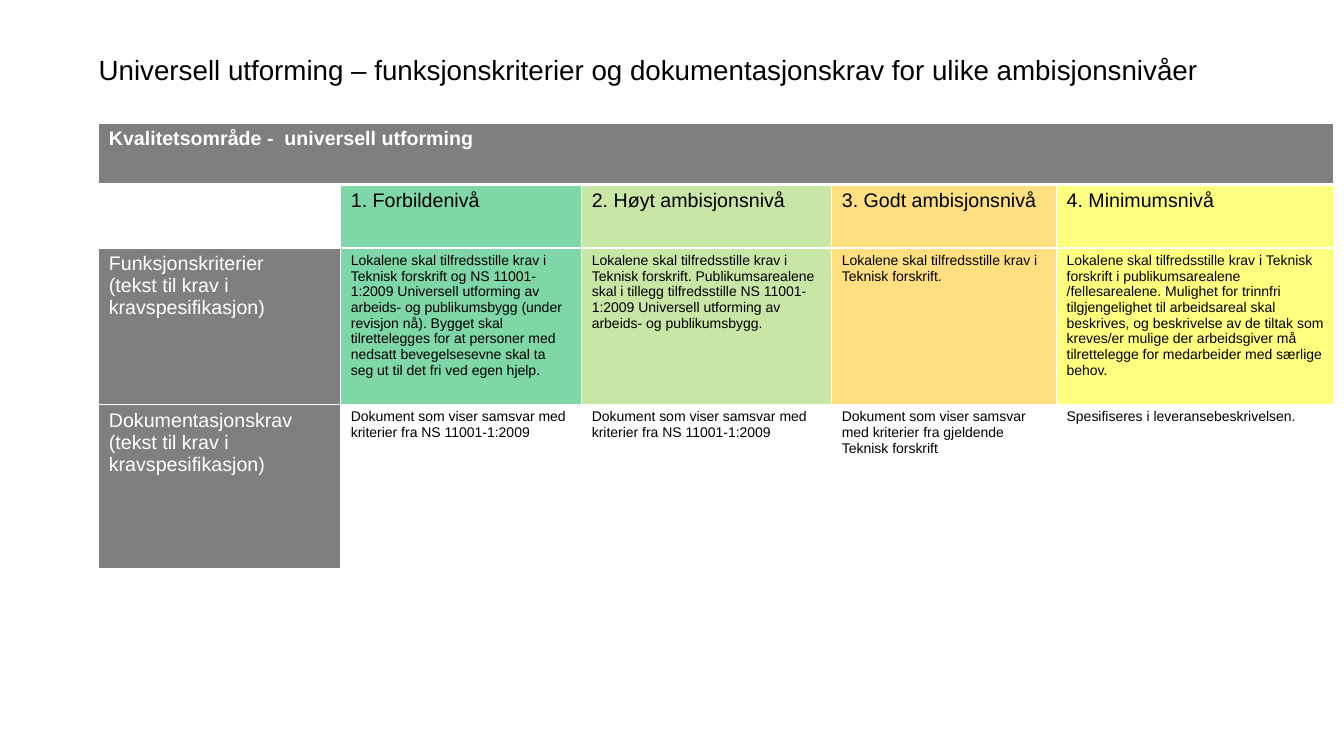
from lxml.etree import SubElement
from pptx import Presentation
from pptx.dml.color import RGBColor
from pptx.enum.text import MSO_ANCHOR
from pptx.oxml.ns import qn
from pptx.util import Inches, Pt

BLACK = RGBColor(0x00, 0x00, 0x00)
WHITE = RGBColor(0xFF, 0xFF, 0xFF)
GREEN = RGBColor(0x00, 0xB0, 0x50)
LIME = RGBColor(0x92, 0xD0, 0x50)
AMBER = RGBColor(0xFF, 0xC0, 0x00)
YELLOW = RGBColor(0xFF, 0xFF, 0x00)

LEVEL_COLORS = [GREEN, LIME, AMBER, YELLOW]
COL_WIDTHS = [2.4, 2.39, 2.48, 2.23, 2.75]
ROW_HEIGHTS = [0.61, 0.63, 1.55, 1.63]

TITLE = "Universell utforming – funksjonskriterier og dokumentasjonskrav for ulike ambisjonsnivåer"
AREA = "Kvalitetsområde -  universell utforming"
LEVELS = ["1. Forbildenivå", "2. Høyt ambisjonsnivå", "3. Godt ambisjonsnivå", "4. Minimumsnivå"]
CRITERIA_HEAD = ["Funksjonskriterier", "(tekst til krav i kravspesifikasjon)"]
CRITERIA = [
    "Lokalene skal tilfredsstille krav i Teknisk forskrift og NS 11001-1:2009 Universell "
    "utforming av arbeids- og publikumsbygg (under revisjon nå). Bygget skal tilrettelegges "
    "for at personer med nedsatt bevegelsesevne skal ta seg ut til det fri ved egen hjelp.",
    "Lokalene skal tilfredsstille krav i Teknisk forskrift. Publikumsarealene skal i tillegg "
    "tilfredsstille NS 11001-1:2009 Universell utforming av arbeids- og publikumsbygg.",
    "Lokalene skal tilfredsstille krav i Teknisk forskrift.",
    "Lokalene skal tilfredsstille krav i Teknisk forskrift i publikumsarealene "
    "/fellesarealene. Mulighet for trinnfri tilgjengelighet til arbeidsareal skal beskrives, "
    "og beskrivelse av de tiltak som kreves/er mulige der arbeidsgiver må tilrettelegge for "
    "medarbeider med særlige behov.",
]
DOCS_HEAD = ["Dokumentasjonskrav (tekst til krav i kravspesifikasjon)"]
DOCS = [
    "Dokument som viser samsvar med kriterier fra NS 11001-1:2009",
    "Dokument som viser samsvar med kriterier fra NS 11001-1:2009",
    "Dokument som viser samsvar med kriterier fra gjeldende Teknisk forskrift",
    "Spesifiseres i leveransebeskrivelsen.",
]


class SlideBuilder:
    font = "Arial"
    head_size = 14
    body_size = 10

    def __init__(self, slide):
        self.slide = slide

    def add_text(self, tf, lines, size, color, bold=False):
        for i, line in enumerate(lines):
            p = tf.paragraphs[0] if i == 0 else tf.add_paragraph()
            r = p.add_run()
            r.text = line
            r.font.name = self.font
            r.font.size = Pt(size)
            r.font.bold = bold
            r.font.color.rgb = color

    def title(self, text, left, top, width, height):
        sp = self.slide.shapes.add_textbox(Inches(left), Inches(top), Inches(width), Inches(height))
        tf = sp.text_frame
        tf.word_wrap = True
        tf.vertical_anchor = MSO_ANCHOR.MIDDLE
        self.add_text(tf, [text], 19.8, BLACK)

    def table(self, left, top, widths, heights):
        frame = self.slide.shapes.add_table(
            len(heights), len(widths), Inches(left), Inches(top),
            Inches(sum(widths)), Inches(sum(heights)))
        table = frame.table
        table.first_row = False
        table.horz_banding = False
        for column, width in zip(table.columns, widths):
            column.width = Inches(width)
        for row, height in zip(table.rows, heights):
            row.height = Inches(height)
        for i, row in enumerate(table.rows):
            for cell in row.cells:
                self.borders(cell, top=3 if i == 1 else 1, bottom=3 if i == 0 else 1)
        return table

    def borders(self, cell, top, bottom):
        tc_pr = cell._tc.get_or_add_tcPr()
        for side, width in (("L", 1), ("R", 1), ("T", top), ("B", bottom)):
            ln = SubElement(tc_pr, qn(f"a:ln{side}"), w=str(Pt(width)))
            fill = SubElement(ln, qn("a:solidFill"))
            SubElement(fill, qn("a:srgbClr"), val=str(WHITE))

    def shade(self, cell, color):
        cell.fill.solid()
        cell.fill.fore_color.rgb = color
        clr = cell._tc.tcPr.find(qn("a:solidFill")).find(qn("a:srgbClr"))
        SubElement(clr, qn("a:alpha"), val="50000")

    def cell(self, cell, lines, size, color, fill, bold=False):
        self.shade(cell, fill)
        self.add_text(cell.text_frame, lines, size, color, bold)

    def row(self, table, index, head, texts, size, fills):
        if head:
            self.cell(table.cell(index, 0), head, self.head_size, WHITE, BLACK)
        else:
            self.shade(table.cell(index, 0), WHITE)
        for col, (text, fill) in enumerate(zip(texts, fills), 1):
            self.cell(table.cell(index, col), [text], size, BLACK, fill)


def main():
    prs = Presentation()
    prs.slide_width = Inches(13.33)
    prs.slide_height = Inches(7.5)
    s = SlideBuilder(prs.slides.add_slide(prs.slide_layouts[6]))

    s.title(TITLE, 0.88, 0.18, 11.5, 1.02)
    table = s.table(0.98, 1.22, COL_WIDTHS, ROW_HEIGHTS)
    area = table.cell(0, 0)
    area.merge(table.cell(0, len(COL_WIDTHS) - 1))
    s.cell(area, [AREA], s.head_size, WHITE, BLACK, bold=True)
    s.row(table, 1, None, LEVELS, s.head_size, LEVEL_COLORS)
    s.row(table, 2, CRITERIA_HEAD, CRITERIA, s.body_size, LEVEL_COLORS)
    s.row(table, 3, DOCS_HEAD, DOCS, s.body_size, [WHITE] * len(DOCS))

    prs.save("out.pptx")


if __name__ == "__main__":
    main()
